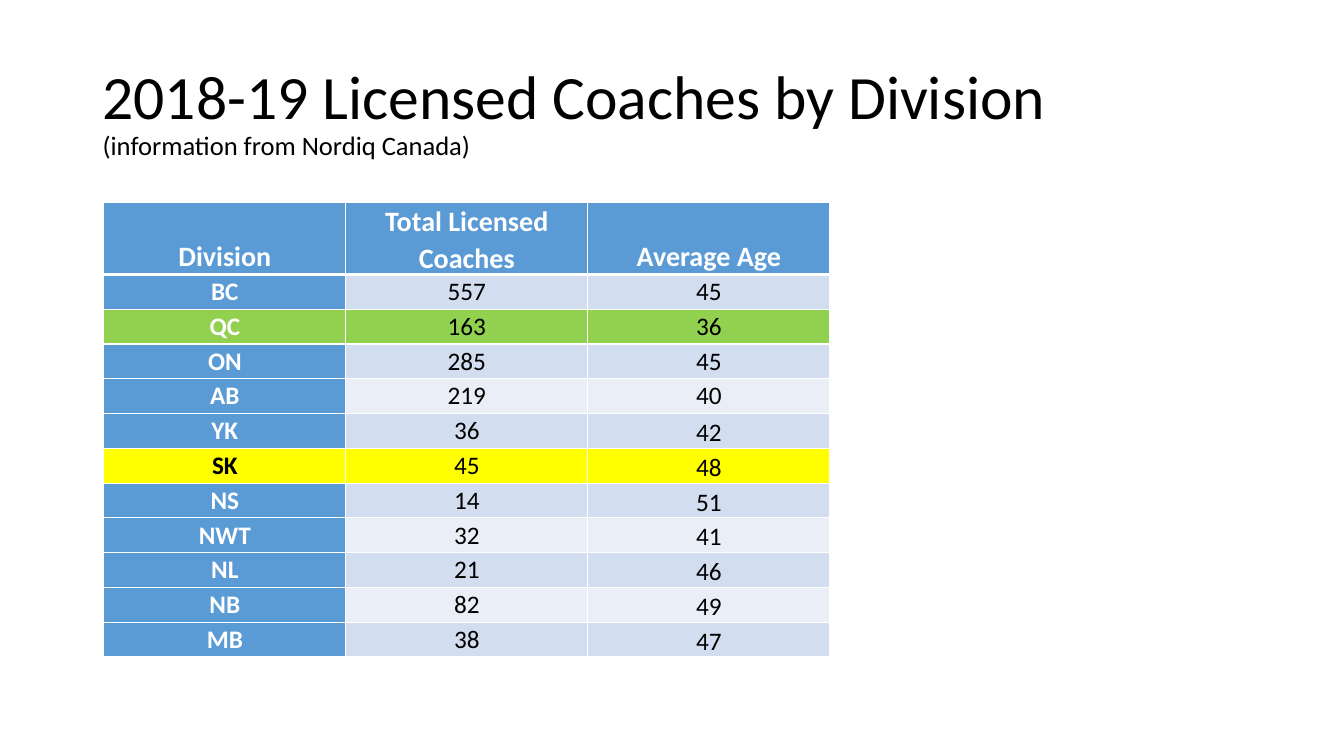
from lxml import etree
from pptx import Presentation
from pptx import util as u
from pptx.dml.color import RGBColor
from pptx.enum import text
from pptx.oxml import ns


def style_font(font, size, color, bold=False):
    values = {"name": "Calibri", "size": u.Pt(size), "bold": bold}
    for name, value in values.items():
        setattr(font, name, value)
    font.color.rgb = RGBColor.from_string(color)


def add_border(cell, side, points, color):
    line = etree.SubElement(cell._tc.get_or_add_tcPr(), ns.qn(f"a:{side}"), w=str(u.Pt(points)))
    fill = etree.SubElement(line, ns.qn("a:solidFill"))
    etree.SubElement(fill, ns.qn("a:srgbClr"), val=color)


WHITE, BLACK, BLUE = "FFFFFF", "000000", "5B9BD5"
BANDS = ["EAEFF7", "D2DEEF"]
HIGHLIGHTS = {"QC": ("92D050", WHITE), "SK": ("FFFF00", BLACK)}
FIRST_BOTTOM_ROW = 5

rows = [
    ("Division", "Total Licensed Coaches", "Average Age"),
    ("BC", 557, 45),
    ("QC", 163, 36),
    ("ON", 285, 45),
    ("AB", 219, 40),
    ("YK", 36, 42),
    ("SK", 45, 48),
    ("NS", 14, 51),
    ("NWT", 32, 41),
    ("NL", 21, 46),
    ("NB", 82, 49),
    ("MB", 38, 47),
]

presentation = Presentation()
presentation.slide_width = u.Inches(13.33)
presentation.slide_height = u.Inches(7.5)
slide = presentation.slides.add_slide(presentation.slide_layouts[6])

title = slide.shapes.add_textbox(u.Inches(0.92), u.Inches(0.4), u.Inches(11.5), u.Inches(1.45))
title.text_frame.word_wrap = True
title.text_frame.vertical_anchor = text.MSO_ANCHOR.MIDDLE
paragraph = title.text_frame.paragraphs[0]
paragraph.line_spacing = 0.9
heading = paragraph.add_run()
heading.text = "2018-19 Licensed Coaches by Division"
style_font(heading.font, 44, BLACK)
paragraph.add_line_break()
source = paragraph.add_run()
source.text = "(information from Nordiq Canada)"
style_font(source.font, 19, BLACK)

table = slide.shapes.add_table(
    len(rows), 3, u.Inches(1.03), u.Inches(2.01), u.Inches(7.21), u.Inches(4.51)
).table
for column in table.columns:
    column.width = u.Inches(2.4)

for row_index, row in enumerate(rows):
    header = row_index == 0
    table.rows[row_index].height = u.Inches(0.69 if header else 0.345)
    label_fill, label_color = HIGHLIGHTS.get(row[0], (BLUE, WHITE))
    value_fill = label_fill if row[0] in HIGHLIGHTS else BANDS[row_index % 2]
    for column_index, value in enumerate(row):
        cell = table.cell(row_index, column_index)
        label = header or column_index == 0
        at_bottom = header or (column_index == 2 and row_index >= FIRST_BOTTOM_ROW)
        values = {
            "margin_left": u.Inches(0.07),
            "margin_right": u.Inches(0.07),
            "margin_top": 0,
            "margin_bottom": 0,
            "vertical_anchor": text.MSO_ANCHOR.BOTTOM if at_bottom else text.MSO_ANCHOR.TOP,
        }
        for name, setting in values.items():
            setattr(cell, name, setting)
        add_border(cell, "lnL", 1, WHITE)
        add_border(cell, "lnR", 1, WHITE)
        add_border(cell, "lnT", 3 if row_index == 1 else 1, WHITE)
        add_border(cell, "lnB", 3 if header else 1, WHITE)
        cell.fill.solid()
        cell.fill.fore_color.rgb = RGBColor.from_string(label_fill if label else value_fill)
        paragraph = cell.text_frame.paragraphs[0]
        paragraph.alignment = text.PP_ALIGN.CENTER
        paragraph.line_spacing = 1.07
        run = paragraph.add_run()
        run.text = str(value)
        style_font(run.font, 20 if header else 18, label_color if label else BLACK, label)

presentation.save("out.pptx")
